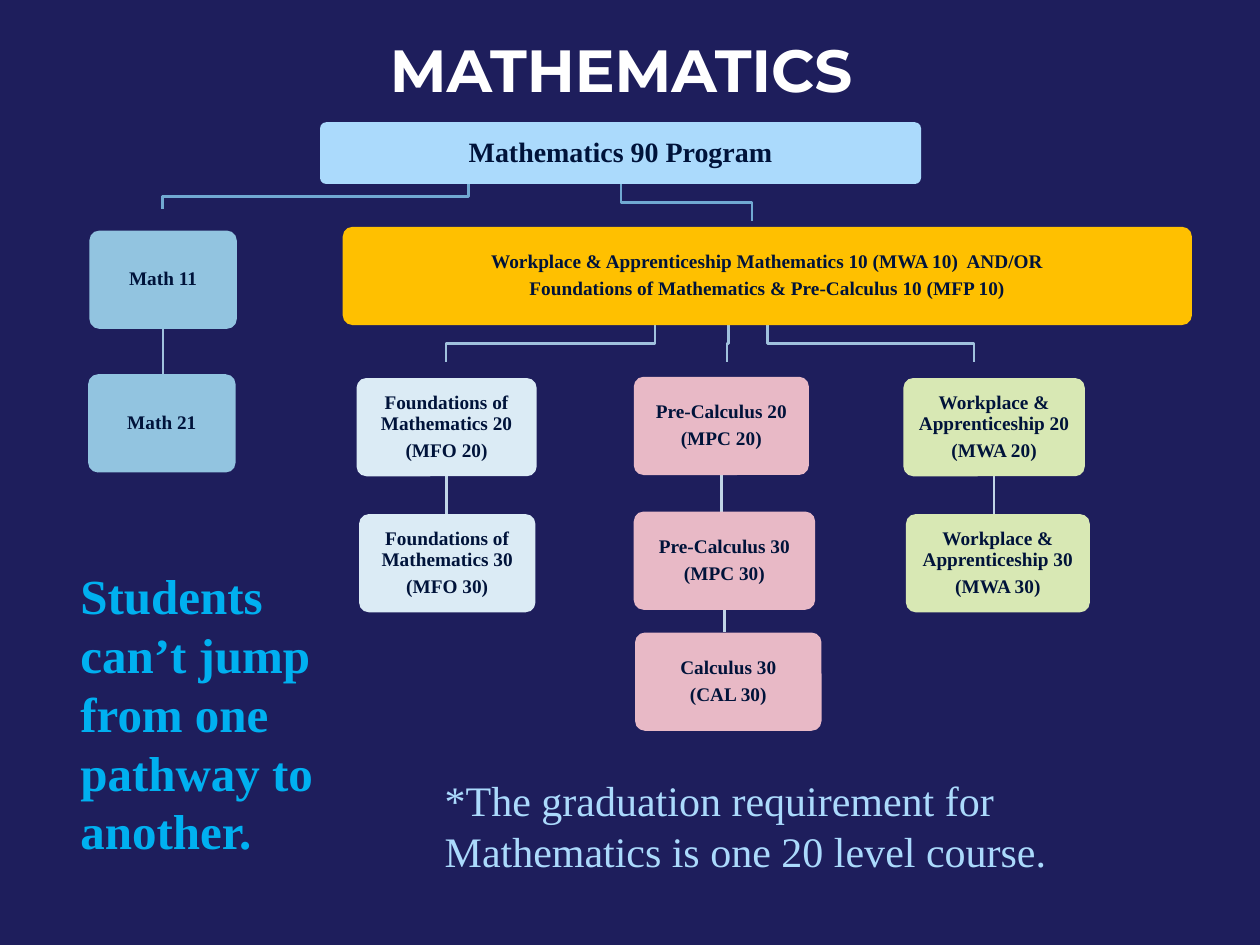
from dataclasses import dataclass
from lxml.etree import SubElement
from pptx import Presentation
from pptx.dml.color import RGBColor as Rgb
from pptx.enum.shapes import MSO_CONNECTOR as Link, MSO_SHAPE as Form
from pptx.enum.text import MSO_ANCHOR as Anchor, PP_ALIGN as Align
from pptx.oxml.ns import qn
from pptx.util import Inches, Pt


@dataclass(frozen=True)
class Theme:
    back: str = "1E1E5C"
    ink: str = "00133A"
    white: str = "FFFFFF"
    sky: str = "ABDAFC"
    blue: str = "92C4E0"
    gold: str = "FFC000"
    ice: str = "DBEBF5"
    pink: str = "E8B9C6"
    lime: str = "D8E8B4"
    cyan: str = "00B0F0"
    top: str = "71A9D2"
    mid: str = "A0C1DD"
    low: str = "C1D5E7"
    serif: str = "Times New Roman"
    sans: str = "Montserrat"
    title: int = 34
    warn: int = 28
    note: int = 24
    root: int = 16
    body: int = 11
    line: float = 1.5


T = Theme()

# Content: each box is (left, width, paragraphs)
TITLE = "MATHEMATICS"
WARN = "Students can’t jump from one pathway to another."
NOTE = "*The graduation requirement for Mathematics is one 20 level course."
ROOT = (2.54, 4.77, ["Mathematics 90 Program"])
CORE = (2.72, 6.74, [
    "Workplace & Apprenticeship Mathematics 10 (MWA 10)  AND/OR",
    "Foundations of Mathematics & Pre-Calculus 10 (MFP 10)"])

# Each path is (fill, link colour, row tops, boxes)
PATHS = [
    (T.blue, T.mid, (1.83, 2.97), [
        (0.71, 1.17, ["Math 11"]),
        (0.70, 1.17, ["Math 21"])]),
    (T.ice, T.low, (3, 4.08), [
        (2.83, 1.43, ["Foundations of Mathematics 20", "(MFO 20)"]),
        (2.85, 1.40, ["Foundations of Mathematics 30", "(MFO 30)"])]),
    (T.pink, T.low, (2.99, 4.06, 5.02), [
        (5.03, 1.39, ["Pre-Calculus 20", "(MPC 20)"]),
        (5.03, 1.44, ["Pre-Calculus 30", "(MPC 30)"]),
        (5.04, 1.48, ["Calculus 30", "(CAL 30)"])]),
    (T.lime, T.low, (3, 4.08), [
        (7.17, 1.44, ["Workplace & Apprenticeship 20", "(MWA 20)"]),
        (7.19, 1.46, ["Workplace & Apprenticeship 30", "(MWA 30)"])]),
]

# Each branch is (from x, to x, top, bottom, colour)
FORKS = [
    (3.72, 1.29, 1.46, 1.66, T.top),
    (4.93, 5.97, 1.46, 1.75, T.top),
    (5.20, 3.54, 2.58, 2.87, T.mid),
    (5.78, 5.77, 2.58, 2.87, T.mid),
    (6.09, 7.73, 2.58, 2.87, T.mid),
]
TALL = 0.78

deck = Presentation()
deck.slide_width, deck.slide_height = Inches(10), Inches(7.5)
slide = deck.slides.add_slide(deck.slide_layouts[6])
slide.background.fill.solid()
slide.background.fill.fore_color.rgb = Rgb.from_string(T.back)
shapes = slide.shapes


def write(frame, texts, size, color, face=T.serif, bold=True,
          align=Align.LEFT, space=None, after=0):
    frame.word_wrap = True
    for i, text in enumerate(texts):
        para = frame.add_paragraph() if i else frame.paragraphs[0]
        para.alignment = align
        para.space_after = Pt(after)
        if space:
            para.line_spacing = space
        run = para.add_run()
        run.text = text
        font = run.font
        font.name, font.size, font.bold = face, Pt(size), bold
        font.color.rgb = Rgb.from_string(color)


def label(x, y, w, h, text, size, color, **look):
    frame = shapes.add_textbox(*map(Inches, (x, y, w, h))).text_frame
    write(frame, [text], size, color, **look)
    return frame


def stroke(shape, color):
    shape.line.color.rgb = Rgb.from_string(color)
    shape.line.width = Pt(T.line)


def box(item, y, h, fill, size=T.body, pad=0.05):
    x, w, texts = item
    shape = shapes.add_shape(Form.ROUNDED_RECTANGLE, *map(Inches, (x, y, w, h)))
    shape.adjustments[0] = 0.1
    shape.shadow.inherit = False
    shape.fill.solid()
    shape.fill.fore_color.rgb = Rgb.from_string(fill)
    shape.line.fill.background()
    frame = shape.text_frame
    frame.vertical_anchor = Anchor.MIDDLE
    frame.margin_left = frame.margin_right = Inches(pad)
    frame.margin_top = frame.margin_bottom = Inches(pad)
    write(frame, texts, size, T.ink, align=Align.CENTER, space=0.9,
          after=0.35 * size)


def fork(x1, x2, y1, y2, color):
    half = (y1 + y2) / 2
    points = [(Inches(x), Inches(y))
              for x, y in ((x1, y1), (x1, half), (x2, half), (x2, y2))]
    pen = shapes.build_freeform(*points[0])
    pen.add_line_segments(points[1:], close=False)
    shape = pen.convert_to_shape()
    shape.shadow.inherit = False
    shape.fill.background()
    stroke(shape, color)


def drop(x, y1, y2, color):
    line = shapes.add_connector(Link.STRAIGHT, *map(Inches, (x, y1, x, y2)))
    SubElement(line._element.spPr, qn("a:effectLst"))
    stroke(line, color)


# Branches, then the two wide boxes
for item in FORKS:
    fork(*item)
box(ROOT, 0.97, 0.49, T.sky, T.root, 0.07)
box(CORE, 1.8, TALL, T.gold)

# Course paths, each box linked to the next
for fill, color, tops, items in PATHS:
    for (x, w, _), y, below in zip(items, tops, tops[1:]):
        drop(x + w / 2, y + TALL, below, color)
    for item, y in zip(items, tops):
        box(item, y, TALL, fill)

# Title and remarks
head = label(2.43, -0.04, 5, 1.25, TITLE, T.title, T.white, face=T.sans,
             align=Align.CENTER, space=0.9)
head.vertical_anchor = Anchor.MIDDLE
note = label(2.43, 6.1, 6.07, 0.91, NOTE, T.note, T.sky, bold=False)
note.margin_left = Inches(1.1)
label(0.54, 4.44, 2.4, 2.46, WARN, T.warn, T.cyan)

deck.save("out.pptx")
